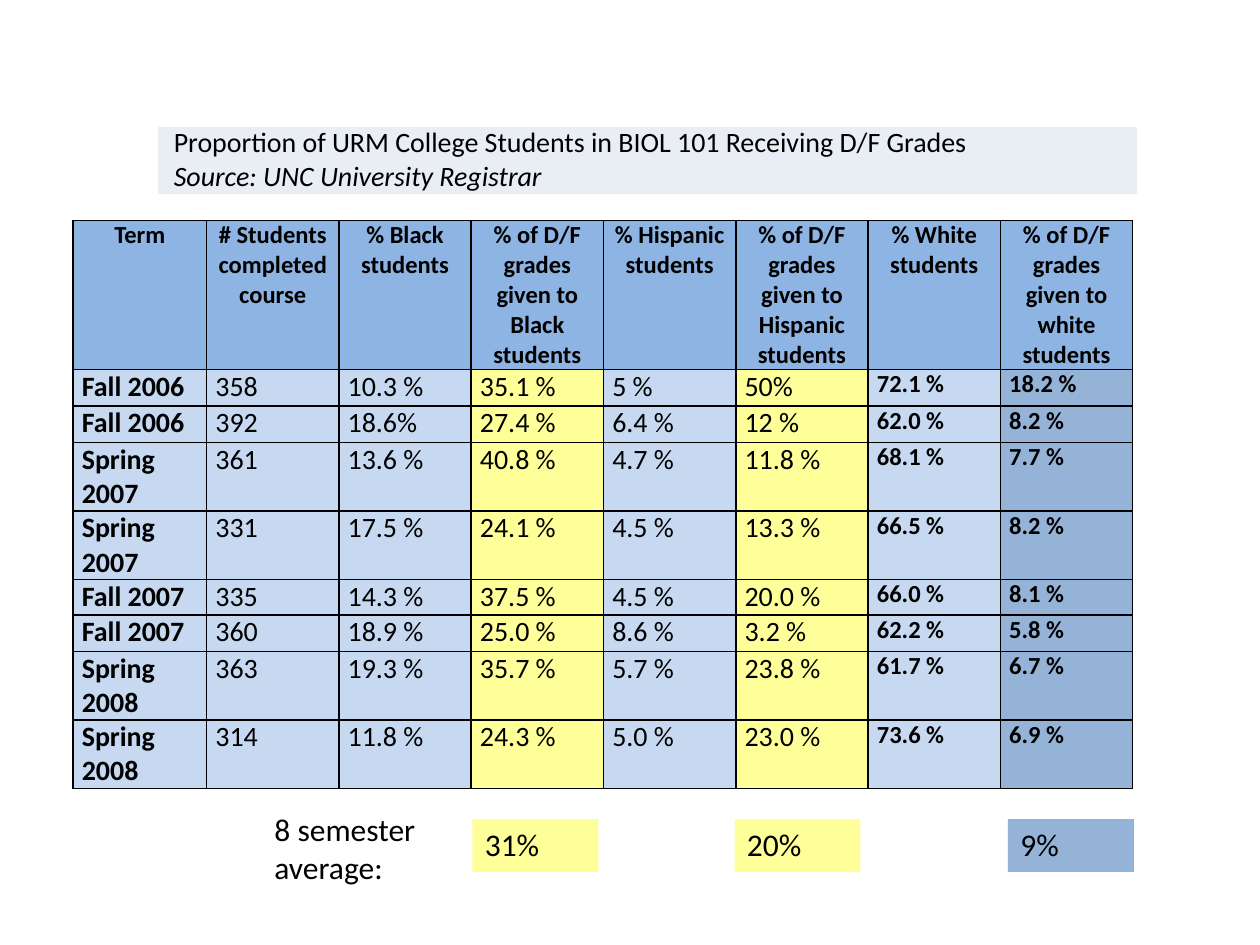
from lxml import etree
from pptx import Presentation
from pptx.dml.color import RGBColor
from pptx.enum.shapes import MSO_SHAPE
from pptx.enum.text import MSO_ANCHOR, PP_ALIGN
from pptx.oxml.ns import qn
from pptx.util import Inches, Pt

LEFT, CENTER, JUSTIFY = PP_ALIGN.LEFT, PP_ALIGN.CENTER, PP_ALIGN.JUSTIFY
TOP, RECT = MSO_ANCHOR.TOP, MSO_SHAPE.RECTANGLE

THEME = {
    "font": "Calibri", "text": "000000", "border": "000000", "heading_border": "FFFFFF",
    "heading": "E9EDF4", "header": "8EB4E3", "plain": "C6D9F1", "urm": "FFFF99", "white": "95B3D7",
    "small": 14, "body": 16, "large": 18,
}

HEADERS = [
    "Term", "# Students completed course", "% Black students",
    "% of D/F grades given to Black students", "% Hispanic students",
    "% of D/F grades given to Hispanic students", "% White students",
    "% of D/F grades given to white students",
]
TERMS = [
    ["Fall 2006", "358", "10.3 %", "35.1 %", "5 %", "50%", "72.1 %", "18.2 %"],
    ["Fall 2006", "392", "18.6%", "27.4 %", "6.4 %", "12 %", "62.0 %", "8.2 %"],
    ["Spring 2007", "361", "13.6 %", "40.8 %", "4.7 %", "11.8 %", "68.1 %", "7.7 %"],
    ["Spring 2007", "331", "17.5 %", "24.1 %", "4.5 %", "13.3 %", "66.5 %", "8.2 %"],
    ["Fall 2007", "335", "14.3 %", "37.5 %", "4.5 %", "20.0 %", "66.0 %", "8.1 %"],
    ["Fall 2007", "360", "18.9 %", "25.0 %", "8.6 %", "3.2 %", "62.2 %", "5.8 %"],
    ["Spring 2008", "363", "19.3 %", "35.7 %", "5.7 %", "23.8 %", "61.7 %", "6.7 %"],
    ["Spring 2008", "314", "11.8 %", "24.3 %", "5.0 %", "23.0 %", "73.6 %", "6.9 %"],
]
COLUMN_FILLS = ["plain", "plain", "plain", "urm", "plain", "urm", "plain", "white"]
COLUMN_WIDTHS = [1.06] + [1.05] * 7
ROW_HEIGHTS = [1.07, 0.29, 0.29, 0.46, 0.46, 0.28, 0.29, 0.46, 0.46]
AVERAGES = [("31%", 3.75, "urm"), ("20%", 5.83, "urm"), ("9%", 8, "white")]


def write(tf, lines, size, align=LEFT, **formats):
    tf.word_wrap = True
    for i, line in enumerate(lines):
        p = tf.paragraphs[0] if i == 0 else tf.add_paragraph()
        p.alignment = align
        r = p.add_run()
        r.text = line
        values = {"name": THEME["font"], "size": Pt(THEME[size]), "bold": False, **formats}
        for name, value in values.items():
            setattr(r.font, name, value)
        r.font.color.rgb = RGBColor.from_string(THEME["text"])


def style_cell(cell, fill, border, inset):
    margins = {"margin_left": inset, "margin_right": inset, "margin_top": 0, "margin_bottom": 0}
    for name, value in margins.items():
        setattr(cell, name, Inches(value))
    cell.vertical_anchor = TOP
    tcPr = cell._tc.get_or_add_tcPr()
    for side in ("a:lnL", "a:lnR", "a:lnT", "a:lnB"):
        ln = etree.SubElement(tcPr, qn(side), w=str(Pt(1)))
        solid = etree.SubElement(ln, qn("a:solidFill"))
        etree.SubElement(solid, qn("a:srgbClr"), val=THEME[border])
    cell.fill.solid()
    cell.fill.fore_color.rgb = RGBColor.from_string(THEME[fill])


prs = Presentation()
prs.slide_width, prs.slide_height = Inches(10), Inches(7.5)
s = prs.slides.add_slide(prs.slide_layouts[6])

grades = s.shapes.add_table(
    len(TERMS) + 1, len(HEADERS), Inches(0.58), Inches(1.75),
    Inches(sum(COLUMN_WIDTHS)), Inches(sum(ROW_HEIGHTS))).table
grades.first_row = grades.horz_banding = False
for column, width in zip(grades.columns, COLUMN_WIDTHS):
    column.width = Inches(width)
for row, height in zip(grades.rows, ROW_HEIGHTS):
    row.height = Inches(height)
for i, values in enumerate([HEADERS] + TERMS):
    for j, value in enumerate(values):
        cell = grades.cell(i, j)
        header = i == 0
        style_cell(cell, "header" if header else COLUMN_FILLS[j], "border", 0.07)
        write(cell.text_frame, [value], "small" if header or j > 5 else "body",
              CENTER if header else JUSTIFY, bold=header or j == 0 or j > 5)

heading = s.shapes.add_table(1, 1, Inches(1.25), Inches(1), Inches(7.78), Inches(0.53)).table
heading.first_row = heading.horz_banding = False
cell = heading.cell(0, 0)
style_cell(cell, "heading", "heading_border", 0.13)
write(cell.text_frame, [
    "Proportion of URM College Students in BIOL 101 Receiving D/F Grades",
    "Source: UNC University Registrar"], "body")
cell.text_frame.paragraphs[1].runs[0].font.italic = True

for value, left, fill in AVERAGES:
    sp = s.shapes.add_shape(RECT, Inches(left), Inches(6.5), Inches(1), Inches(0.42))
    sp.shadow.inherit = False
    sp.fill.solid()
    sp.fill.fore_color.rgb = RGBColor.from_string(THEME[fill])
    sp.line.fill.background()
    sp.text_frame.vertical_anchor = TOP
    write(sp.text_frame, [value], "large")

label = s.shapes.add_textbox(Inches(2.08), Inches(6.38), Inches(1.42), Inches(0.71))
write(label.text_frame, ["8 semester average:"], "large")

prs.save("out.pptx")
